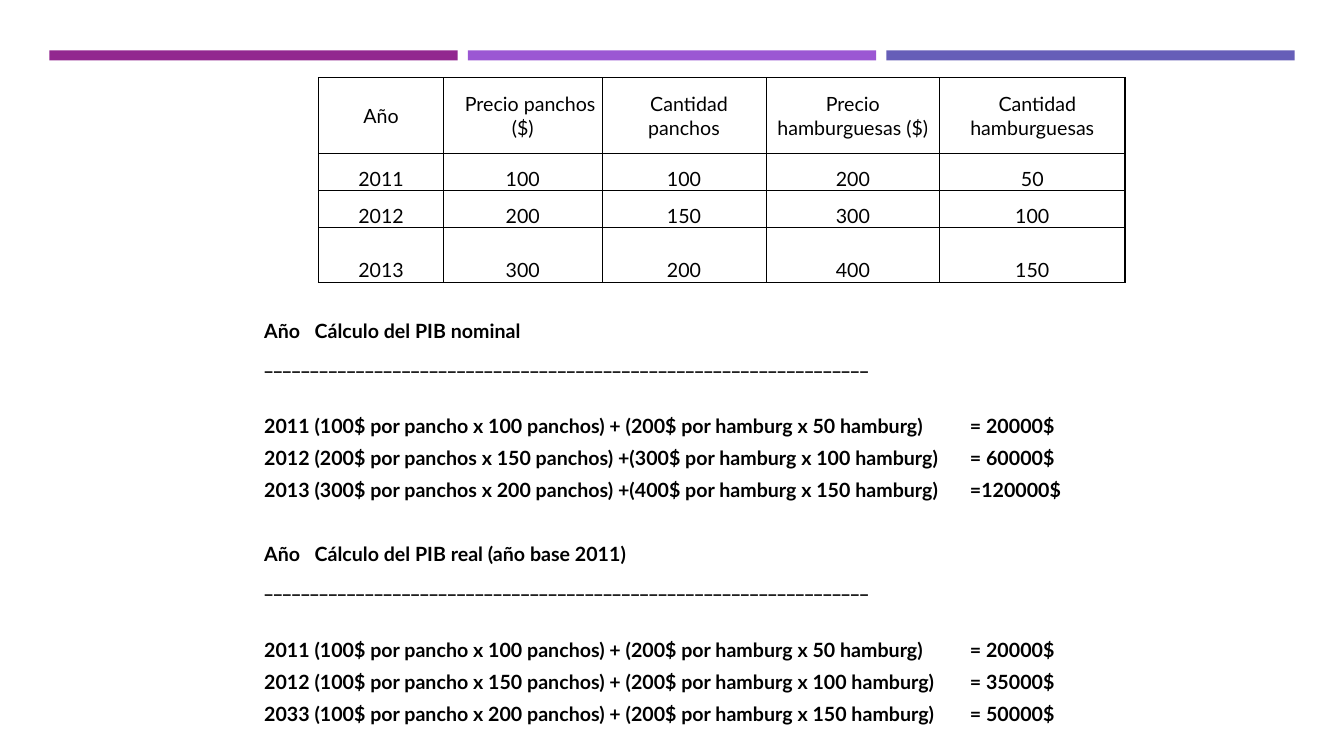
from lxml import etree
from pptx import Presentation
from pptx.dml.color import RGBColor
from pptx.enum.shapes import MSO_SHAPE
from pptx.enum.text import MSO_ANCHOR, MSO_AUTO_SIZE, PP_ALIGN
from pptx.oxml.ns import qn
from pptx.util import Inches, Pt

RECTANGLE = MSO_SHAPE.RECTANGLE
TOP, MIDDLE, BOTTOM = MSO_ANCHOR.TOP, MSO_ANCHOR.MIDDLE, MSO_ANCHOR.BOTTOM
CENTER, LEFT = PP_ALIGN.CENTER, PP_ALIGN.LEFT
NO_AUTOFIT = MSO_AUTO_SIZE.NONE

COLORS = {"magenta": "92278F", "violet": "9B57D3", "indigo": "665EB8", "ink": "000000"}
FONT = "Lato"
TEXT_SIZE = 14
LINE_GAP = 6
BLOCK_GAP = LINE_GAP + 22.8  # one extra text line
RULE = "_" * 66

PRICES = [
    ["Año", "   Precio panchos ($)", "  Cantidad panchos",
     "Precio hamburguesas ($)", "  Cantidad hamburguesas"],
    ["2011", "100", "100", "200", "50"],
    ["2012", "200", "150", "300", "100"],
    ["2013", "300", "200", "400", "150"],
]
COLUMN_WIDTHS = [1.24, 1.57, 1.63, 1.72, 1.84]
ROW_HEIGHTS = [0.75, 0.37, 0.37, 0.54]

# Heading, tab stops for formula and result, rows
CALCULATIONS = [
    ("Cálculo del PIB nominal", (0.63, 7.74), [
        ("2011", "(100$ por pancho x 100 panchos) + (200$ por hamburg x 50 hamburg)", "= 20000$"),
        ("2012", "(200$ por panchos x 150 panchos) +(300$ por hamburg x 100 hamburg)", "= 60000$"),
        ("2013", "(300$ por panchos x 200 panchos) +(400$ por hamburg x 150 hamburg)", "=120000$"),
    ]),
    ("Cálculo del PIB real (año base 2011)", (0.58, 7.68), [
        ("2011", "(100$ por pancho x 100 panchos) + (200$ por hamburg x 50 hamburg)", "= 20000$"),
        ("2012", "(100$ por pancho x 150 panchos) + (200$ por hamburg x 100 hamburg)", "= 35000$"),
        ("2033", "(100$ por pancho x 200 panchos) + (200$ por hamburg x 150 hamburg)", "= 50000$"),
    ]),
]


def set_font(para, bold=False):
    para.font.name = FONT
    para.font.size = Pt(TEXT_SIZE)
    para.font.bold = bold
    para.font.color.rgb = RGBColor.from_string(COLORS["ink"])


def add_color_bars(slide, left, top, width, height):
    names = ["magenta", "violet", "indigo"]
    gap = 0.1
    bar_width = (width - gap * (len(names) - 1)) / len(names)
    for index, name in enumerate(names):
        bar = slide.shapes.add_shape(
            RECTANGLE, Inches(left + index * (bar_width + gap)), Inches(top),
            Inches(bar_width), Inches(height))
        bar.shadow.inherit = False
        bar.fill.solid()
        bar.fill.fore_color.rgb = RGBColor.from_string(COLORS[name])
        bar.line.fill.background()


def set_borders(cell, outer_sides):
    """Draw all four sides, thicker on the outside of the table."""
    properties = cell._tc.get_or_add_tcPr()
    for position, side in enumerate("LRTB"):
        width = Pt(1 if side in outer_sides else 0.5)
        line = etree.Element(qn(f"a:ln{side}"), w=str(width))
        fill = etree.SubElement(line, qn("a:solidFill"))
        etree.SubElement(fill, qn("a:srgbClr"), val=COLORS["ink"])
        properties.insert(position, line)


def add_price_table(slide, left, top, width, height):
    table = slide.shapes.add_table(
        len(PRICES), len(COLUMN_WIDTHS), Inches(left), Inches(top),
        Inches(width), Inches(height)).table
    table.first_row = table.horz_banding = False
    for column, column_width in zip(table.columns, COLUMN_WIDTHS):
        column.width = Inches(column_width)
    last_row, last_column = len(PRICES) - 1, len(COLUMN_WIDTHS) - 1
    for row_index, values in enumerate(PRICES):
        table.rows[row_index].height = Inches(ROW_HEIGHTS[row_index])
        for column_index, value in enumerate(values):
            cell = table.cell(row_index, column_index)
            cell.margin_left = cell.margin_top = cell.margin_right = Inches(0.01)
            cell.margin_bottom = 0
            cell.vertical_anchor = BOTTOM if row_index else MIDDLE
            cell.fill.background()
            para = cell.text_frame.paragraphs[0]
            para.text = value
            para.alignment = CENTER
            set_font(para)
            edges = {"L": column_index == 0, "R": column_index == last_column,
                     "T": row_index == 0, "B": row_index == last_row}
            set_borders(cell, [side for side, outer in edges.items() if outer])


def format_line(para, text, gap, tabs=()):
    """Fill an unbulleted line; tabs are (inches, alignment) pairs."""
    para.text = text
    para.alignment = LEFT
    para.line_spacing = 1.0
    para.space_before = Pt(gap)
    para.space_after = Pt(0)
    set_font(para, bold=True)
    properties = para._p.get_or_add_pPr()
    properties.set("marL", "0")
    properties.set("indent", "0")
    bullet = etree.Element(qn("a:buNone"))
    tab_list = etree.Element(qn("a:tabLst"))
    for position, alignment in tabs:
        etree.SubElement(tab_list, qn("a:tab"), pos=str(Inches(position)), algn=alignment)
    place = properties.index(properties.find(qn("a:defRPr")))
    properties.insert(place, bullet)
    properties.insert(place + 1, tab_list)


def fill_calculations(body, left, top, width, height):
    body.left, body.top = Inches(left), Inches(top)
    body.width, body.height = Inches(width), Inches(height)
    frame = body.text_frame
    frame.word_wrap = True
    frame.auto_size = NO_AUTOFIT
    frame.vertical_anchor = TOP
    frame.margin_left = Inches(0.19)
    frame.margin_top = Inches(0.05)
    lines = []
    for heading, (formula_tab, result_tab), rows in CALCULATIONS:
        heading_gap = BLOCK_GAP if lines else 0
        lines.append((f"Año\t{heading}", heading_gap, [(3.3, "l")]))
        lines.append((RULE, LINE_GAP, []))
        row_tabs = [(formula_tab, "l"), (result_tab, "r")]
        for index, row in enumerate(rows):
            lines.append(("\t".join(row), LINE_GAP if index else BLOCK_GAP, row_tabs))
    for index, line in enumerate(lines):
        para = frame.add_paragraph() if index else frame.paragraphs[0]
        format_line(para, *line)


def main():
    deck = Presentation()
    deck.slide_width, deck.slide_height = Inches(13.33), Inches(7.5)
    slide = deck.slides.add_slide(deck.slide_layouts[1])
    title = slide.shapes.title
    title.element.getparent().remove(title.element)
    add_color_bars(slide, 0.49, 0.5, 12.35, 0.1)
    fill_calculations(slide.placeholders[1], 2.43, 3.11, 10.43, 4.32)
    add_price_table(slide, 3.16, 0.77, 8, 2.03)
    deck.save("out.pptx")


if __name__ == "__main__":
    main()
